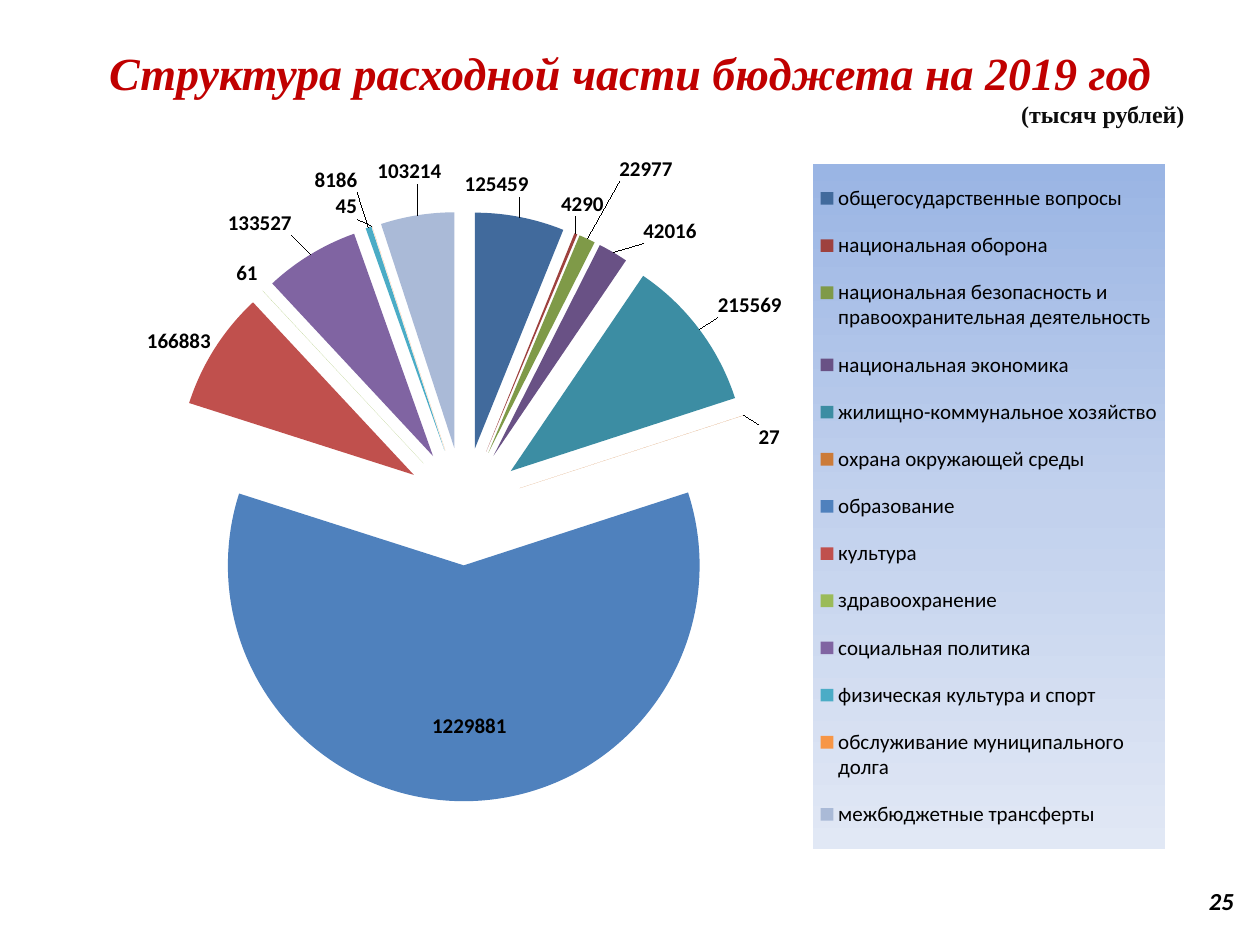
from dataclasses import dataclass

from lxml.etree import SubElement
from pptx import Presentation
from pptx.chart.data import CategoryChartData
from pptx.dml.color import RGBColor
from pptx.enum.chart import XL_CHART_TYPE as ChartType
from pptx.enum.chart import XL_LABEL_POSITION as LabelPos
from pptx.enum.chart import XL_LEGEND_POSITION as LegendPos
from pptx.enum.text import MSO_ANCHOR as Anchor
from pptx.enum.text import PP_ALIGN as Align
from pptx.oxml import parse_xml
from pptx.oxml.ns import nsdecls, qn
from pptx.util import Inches, Pt


@dataclass(frozen=True)
class Theme:
    heading_font: str = "Times New Roman"
    body_font: str = "Calibri"
    title_color: str = "C00000"
    unit_color: str = "0D0D0D"
    text_color: str = "000000"
    legend_top: str = "9AB5E4"
    legend_middle: str = "C2D1ED"
    legend_bottom: str = "E1E8F5"
    title_size: float = 26.3
    unit_size: float = 13.7
    number_size: float = 14
    chart_size: float = 18
    label_size: float = 12


EXPENSES = [
    ("общегосударственные вопросы", 125459, "416A9C", (-0.45, -0.1)),
    ("национальная оборона", 4290, "9E413E", (-0.14, -0.08)),
    ("национальная безопасность и правоохранительная деятельность",
     22977, "7F9A48", (0.23, -0.4)),
    ("национальная экономика", 42016, "695185", (0.21, -0.02)),
    ("жилищно-коммунальное хозяйство", 215569, "3C8DA3", (0.1, -0.06)),
    ("охрана окружающей среды", 27, "CC7B38", (0.06, 0.29)),
    ("образование", 1229881, "4F81BD", (0.04, -0.75)),
    ("культура", 166883, "C0504D", (0.02, 0.07)),
    ("здравоохранение", 61, "9BBB59", None),
    ("социальная политика", 133527, "8064A2", (-0.12, -0.1)),
    ("физическая культура и спорт", 8186, "4BACC6", (-0.07, -0.22)),
    ("обслуживание муниципального долга", 45, "F79646", (-0.1, 0)),
    ("межбюджетные трансферты", 103214, "AABAD7", (0.2, -0.19)),
]


class BudgetSlide:
    """Adds styled text and an exploded pie chart to one slide."""

    def __init__(self, slide, theme):
        self.slide = slide
        self.theme = theme

    def style(self, font, name, size, color, bold=False, italic=False):
        font.name = name
        font.size = Pt(size)
        font.color.rgb = RGBColor.from_string(color)
        font.bold = bold
        font.italic = italic

    def text(self, box, lines):
        frame = self.slide.shapes.add_textbox(*map(Inches, box)).text_frame
        frame.word_wrap = True
        frame.vertical_anchor = Anchor.MIDDLE
        frame.text = "\n".join(line[0] for line in lines)
        for paragraph, (_, align, *look) in zip(frame.paragraphs, lines):
            paragraph.alignment = align
            self.style(paragraph.runs[0].font, *look)

    def layout(self, chart_box, left, top, width=None, height=None, inner=False):
        element = parse_xml(f"<c:layout {nsdecls('c')}><c:manualLayout/></c:layout>")
        manual = element[0]
        if inner:
            SubElement(manual, qn("c:layoutTarget")).set("val", "inner")
        if width:
            for mode in ("xMode", "yMode"):
                SubElement(manual, qn(f"c:{mode}")).set("val", "edge")
        for tag, length, whole in (("x", left, chart_box[2]), ("y", top, chart_box[3]),
                                   ("w", width, chart_box[2]), ("h", height, chart_box[3])):
            if length is not None:
                SubElement(manual, qn(f"c:{tag}")).set("val", str(length / whole))
        return element

    def pie(self, box, expenses, explosion, pie_area, legend_area):
        look = self.theme
        budget = CategoryChartData(number_format="General")
        budget.categories = [name for name, *_ in expenses]
        budget.add_series("Series 1", [amount for _, amount, *_ in expenses])
        chart = self.slide.shapes.add_chart(
            ChartType.PIE, *map(Inches, box), budget).chart
        chart.has_title = False
        self.style(chart.font, look.body_font, look.chart_size, look.text_color)
        plot = chart.plots[0]
        plot.vary_by_categories = True
        series = plot.series[0]
        labels = series.data_labels
        labels.show_value = True
        labels.position = LabelPos.OUTSIDE_END
        label_look = (look.body_font, look.label_size, look.text_color, True)
        self.style(labels.font, *label_look)

        for index, (_, _, color, offset) in enumerate(expenses):
            point = series.points[index]
            point.format.fill.solid()
            point.format.fill.fore_color.rgb = RGBColor.from_string(color)
            if offset:
                label = point.data_label
                self.style(label.font, *label_look)
                label.position = LabelPos.OUTSIDE_END
        drawn = series._element
        for label in drawn.iter(qn("c:dLbl")):
            index = label.find(qn("c:idx"))
            offset = expenses[int(index.get("val"))][3]
            index.addnext(self.layout(box, *offset))
        drawn.find(qn("c:dPt")).addprevious(
            parse_xml(f'<c:explosion {nsdecls("c")} val="{explosion}"/>'))

        area = chart._chartSpace.find(".//" + qn("c:plotArea"))
        for old in area.findall(qn("c:layout")):
            area.remove(old)
        area.insert(0, self.layout(box, *pie_area, inner=True))
        self.legend(chart, box, legend_area)

    def legend(self, chart, chart_box, area):
        look = self.theme
        chart.has_legend = True
        legend = chart.legend
        legend.position = LegendPos.RIGHT
        legend.include_in_layout = False
        self.style(legend.font, look.body_font, look.label_size, look.text_color)
        element = legend._element
        for old in element.findall(qn("c:layout")):
            element.remove(old)
        element.find(qn("c:legendPos")).addnext(self.layout(chart_box, *area))
        stops = "".join(
            f'<a:gs pos="{place}"><a:srgbClr val="{color}"/></a:gs>'
            for place, color in ((0, look.legend_top), (50000, look.legend_middle),
                                 (100000, look.legend_bottom)))
        element.find(qn("c:txPr")).addprevious(parse_xml(
            f'<c:spPr {nsdecls("c", "a")}><a:gradFill><a:gsLst>{stops}</a:gsLst>'
            '<a:lin ang="5400000" scaled="0"/></a:gradFill></c:spPr>'))


def main():
    deck = Presentation()
    deck.slide_width, deck.slide_height = Inches(10), Inches(7.5)
    theme = Theme()
    page = BudgetSlide(deck.slides.add_slide(deck.slide_layouts[6]), theme)
    page.text((7.17, 6.95, 2.72, 0.4), [
        ("25", Align.RIGHT, theme.body_font, theme.number_size,
         theme.text_color, True, True)])
    page.text((0.5, 0.3, 9, 0.77), [
        ("Структура расходной части бюджета на 2019 год", Align.CENTER,
         theme.heading_font, theme.title_size, theme.title_color, True, True),
        ("(тысяч рублей)", Align.RIGHT,
         theme.heading_font, theme.unit_size, theme.unit_color, True)])
    page.pie((0.83, 1.23, 8.5, 5.59), EXPENSES, explosion=25,
             pie_area=(0.51, 0.45, 4.68, 4.68),
             legend_area=(5.62, 0.07, 2.8, 5.44))
    deck.save("out.pptx")


if __name__ == "__main__":
    main()
